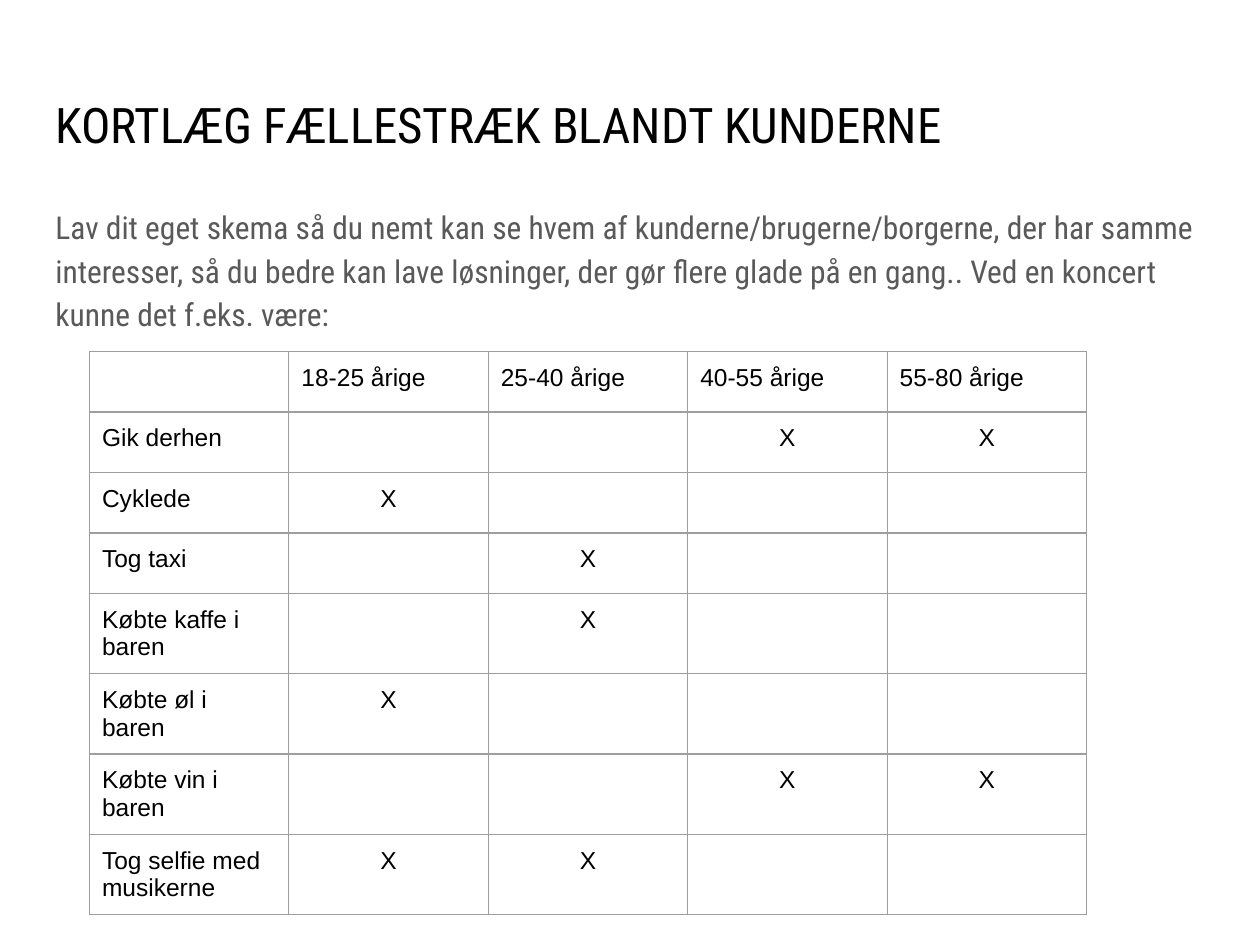
from lxml.etree import SubElement
from pptx import Presentation
from pptx.dml.color import RGBColor
from pptx.enum.text import MSO_ANCHOR, MSO_AUTO_SIZE, PP_ALIGN
from pptx.oxml.ns import qn
from pptx.util import Inches, Pt

WIDE, HIGH = 10, 7.5
LEFT, SPAN = 0.034, 0.932  # shares of the slide's width
PAD = Inches(0.1)
COL, ROW, TALL = 1.583, 0.48, 0.637  # column width, one-line and two-line rows

HEADS = ["", "18-25 årige", "25-40 årige", "40-55 årige", "55-80 årige"]
# Label, columns marked with X, row height
HABITS = [
    ("Gik derhen", (3, 4), ROW),
    ("Cyklede", (1,), ROW),
    ("Tog taxi", (2,), ROW),
    ("Købte kaffe i baren", (2,), TALL),
    ("Købte øl i baren", (1,), TALL),
    ("Købte vin i baren", (3, 4), TALL),
    ("Tog selfie med musikerne", (1, 2), TALL),
]


def color(code):
    return RGBColor.from_string(code)


def write(frame, text, size=14, font="Arial", ink="000000",
          align=PP_ALIGN.LEFT, space=1.0):
    para = frame.paragraphs[0]
    para.alignment = align
    para.line_spacing = space
    para.space_before = Pt(0)
    if text:
        run = para.add_run()
        run.text = text
        run.font.size = Pt(size)
        run.font.name = font
        run.font.bold = False
        run.font.color.rgb = color(ink)
    else:
        # Keeps an empty cell from stretching its row
        end = SubElement(para._p, qn("a:endParaRPr"), sz=str(size * 100))
        SubElement(end, qn("a:latin"), typeface=font)
    return para


def place(holder, top, height, text, **form):
    holder.left, holder.width = Inches(LEFT * WIDE), Inches(SPAN * WIDE)
    holder.top, holder.height = Inches(top * HIGH), Inches(height * HIGH)
    frame = holder.text_frame
    frame.word_wrap = True
    frame.auto_size = MSO_AUTO_SIZE.NONE
    frame.vertical_anchor = MSO_ANCHOR.TOP
    frame.margin_left = frame.margin_right = PAD
    frame.margin_top = frame.margin_bottom = PAD
    return write(frame, text, font="Roboto Condensed", **form)


def plain(para):
    """Remove the bullet and its indent."""
    props = para._p.get_or_add_pPr()
    props.set("marL", "0")
    props.set("indent", "0")
    SubElement(props, qn("a:buNone"))


def border(cell, code, width):
    props = cell._tc.get_or_add_tcPr()
    for spot, side in enumerate(("lnL", "lnR", "lnT", "lnB")):
        line = props.makeelement(qn(f"a:{side}"), {"w": str(Pt(width))})
        fill = SubElement(line, qn("a:solidFill"))
        SubElement(fill, qn("a:srgbClr"), val=code)
        props.insert(spot, line)


def fill_cell(cell, text):
    cell.margin_left = cell.margin_right = PAD
    cell.margin_top = cell.margin_bottom = PAD
    cell.fill.background()
    border(cell, "9E9E9E", 0.75)
    align = PP_ALIGN.CENTER if text == "X" else PP_ALIGN.LEFT
    write(cell.text_frame, text, align=align)


def add_grid(slide, left, top):
    count = len(HEADS)
    rows = [(HEADS, ROW)]
    for label, marks, height in HABITS:
        cells = ["X" if col in marks else "" for col in range(1, count)]
        rows.append(([label] + cells, height))
    total = sum(height for _, height in rows)
    table = slide.shapes.add_table(
        len(rows), count, Inches(left), Inches(top),
        Inches(COL * count), Inches(total)).table
    table.first_row = table.horz_banding = False
    for col in table.columns:
        col.width = Inches(COL)
    for row, (texts, height) in zip(table.rows, rows):
        row.height = Inches(height)
        for cell, text in zip(row.cells, texts):
            fill_cell(cell, text)


def main():
    deck = Presentation()
    deck.slide_width, deck.slide_height = Inches(WIDE), Inches(HIGH)
    slide = deck.slides.add_slide(deck.slide_layouts[1])

    # Title and introduction
    title, body = slide.placeholders
    place(title, 0.087, 0.11, "KORTLÆG FÆLLESTRÆK BLANDT KUNDERNE", size=28)
    intro = place(
        body, 0.201, 0.664,
        "Lav dit eget skema så du nemt kan se hvem af "
        "kunderne/brugerne/borgerne, der har samme interesser, så du bedre "
        "kan lave løsninger, der gør flere glade på en gang.. "
        "Ved en koncert kunne det f.eks. være:",
        size=18, ink="595959", space=1.15)
    plain(intro)

    # Habits by age group
    add_grid(slide, 0.71, 2.79)
    deck.save("out.pptx")


if __name__ == "__main__":
    main()
